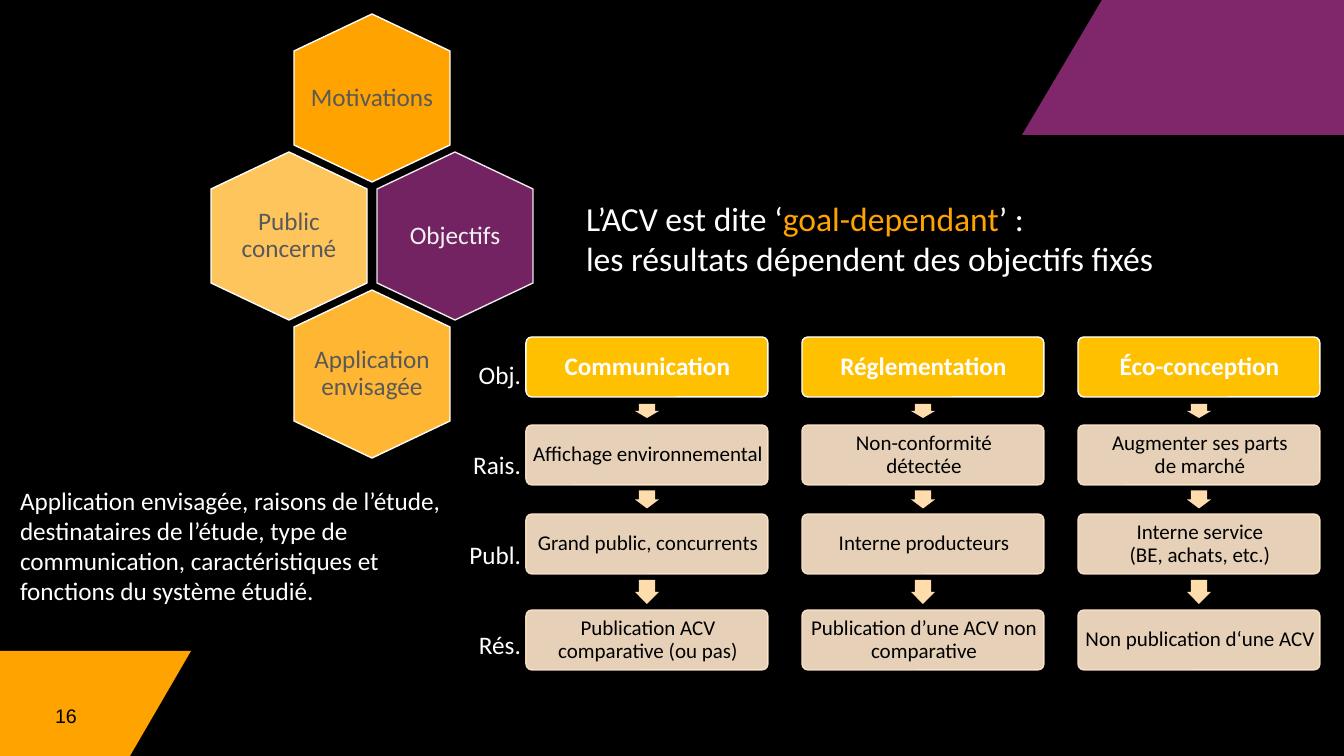
from lxml.etree import SubElement
from pptx import Presentation
from pptx.dml.color import RGBColor
from pptx.enum.shapes import MSO_SHAPE
from pptx.enum.text import MSO_ANCHOR, MSO_AUTO_SIZE, PP_ALIGN
from pptx.oxml.ns import qn
from pptx.util import Pt

PX = 914400 / 100.8

theme = {
    "font": "Calibri", "number_font": "Arial",
    "black": "000000", "white": "FFFFFF", "pale": "F2F2F2", "grey": "595959",
    "purple": "80276C", "orange": "FFA300", "orange_mid": "FFB633", "orange_light": "FFC55D",
    "gold": "FFC000", "cream": "FFE8CC", "arrow": "FFDCAB",
    "title": 24, "body": 18, "cell": 15, "number": 14,
}


def paint(sp, fill, line=None, opacity=100):
    sp.shadow.inherit = False
    sp.fill.solid()
    sp.fill.fore_color.rgb = RGBColor.from_string(theme[fill])
    if line:
        sp.line.color.rgb = RGBColor.from_string(theme[line])
        sp.line.width = Pt(1)
    else:
        sp.line.fill.background()
    if opacity < 100:
        for clr in sp._element.spPr.iter(qn("a:srgbClr")):
            SubElement(clr, qn("a:alpha"), val=str(opacity * 1000))


def write(sp, paragraphs, size, color, margins, anchor, para, font="font", bold=False):
    tf = sp.text_frame
    left, top, right, bottom = [round(m * PX) for m in margins]
    frame = {"word_wrap": True, "auto_size": MSO_AUTO_SIZE.NONE, "vertical_anchor": anchor,
             "margin_left": left, "margin_top": top, "margin_right": right, "margin_bottom": bottom}
    for name, value in frame.items():
        setattr(tf, name, value)
    for i, text in enumerate(paragraphs):
        p = tf.add_paragraph() if i else tf.paragraphs[0]
        p.text = text
        for name, value in para.items():
            setattr(p, name, value)
        if i == 0:
            p.space_before = Pt(0)
        for r in p.runs:
            r.font.name = theme[font]
            r.font.size = Pt(theme[size])
            r.font.bold = bold
            r.font.color.rgb = RGBColor.from_string(theme[color])
    return tf


prs = Presentation()
prs.slide_width = round(1344 * PX)
prs.slide_height = round(756 * PX)
s = prs.slides.add_slide(prs.slide_layouts[1])
s.background.fill.solid()
s.background.fill.fore_color.rgb = RGBColor.from_string(theme["black"])

corners = [
    ("purple", [(1022, 135), (1102, 0), (1344, 0), (1344, 135)]),
    ("orange", [(0, 756), (0, 651), (191, 651), (130, 756)]),
]
for fill, points in corners:
    fb = s.shapes.build_freeform(*points[0], scale=PX)
    fb.add_line_segments(points[1:])
    paint(fb.convert_to_shape(), fill)

number = s.shapes.add_textbox(*[round(v * PX) for v in (0, 685, 87, 47)])
write(number, ["16"], "number", "black", (10, 5, 10, 5), MSO_ANCHOR.BOTTOM,
      {"alignment": PP_ALIGN.RIGHT}, font="number_font")

title, body = s.placeholders
for sp, box in [(title, (562, 193, 610, 85)), (body, (0, 480, 451, 131))]:
    for name, value in zip(("left", "top", "width", "height"), box):
        setattr(sp, name, round(value * PX))

plain = {"alignment": PP_ALIGN.LEFT, "line_spacing": 1.0, "space_before": Pt(0)}
tf = write(title, ["L’ACV est dite ‘"], "title", "white", (24, 5, 0, 0), MSO_ANCHOR.TOP, plain)
p = tf.paragraphs[0]
for text, color in [("goal-dependant", "orange"), ("’ :", "white"),
                    ("les résultats dépendent des objectifs fixés", "white")]:
    if text.startswith("les"):
        p.add_line_break()
    r = p.add_run()
    r.text = text
    r.font.name = theme["font"]
    r.font.size = Pt(theme["title"])
    r.font.color.rgb = RGBColor.from_string(theme[color])

tf = write(body, ["Application envisagée, raisons de l’étude, destinataires de l’étude, type de "
                  "communication, caractéristiques et fonctions du système étudié."],
           "body", "white", (20, 5, 10, 5), MSO_ANCHOR.TOP, plain)
pPr = tf.paragraphs[0]._p.get_or_add_pPr()
for name in ("marL", "indent"):
    pPr.set(name, "0")
SubElement(pPr, qn("a:buNone"))

centred = {"alignment": PP_ALIGN.CENTER, "line_spacing": 0.9}
columns = [
    ["Communication", "Affichage environnemental", "Grand public, concurrents",
     "Publication ACV comparative (ou pas)"],
    ["Réglementation", "Non-conformité\ndétectée", "Interne producteurs",
     "Publication d’une ACV non comparative"],
    ["Éco-conception", "Augmenter ses parts\nde marché", "Interne service\n(BE, achats, etc.)",
     "Non publication d‘une ACV"],
]
row_tops = [337, 425, 514, 610]
arrow_heights = [14, 18, 24]
cell_w, cell_h, arrow_w = 242, 60, 24
for col, texts in enumerate(columns):
    left = 526 + 276 * col
    for row, (text, top) in enumerate(zip(texts, row_tops)):
        sp = s.shapes.add_shape(MSO_SHAPE.ROUNDED_RECTANGLE,
                                *[round(v * PX) for v in (left, top, cell_w, cell_h)])
        sp.adjustments[0] = 0.1
        if row == 0:
            paint(sp, "gold", "white")
            write(sp, [text], "body", "white", (4, 4, 3, 4), MSO_ANCHOR.MIDDLE, centred, bold=True)
            continue
        paint(sp, "cream", "cream", 90)
        write(sp, [text], "cell", "black", (4, 4, 2, 4), MSO_ANCHOR.MIDDLE, centred)
        h = arrow_heights[row - 1]
        middle = (row_tops[row - 1] + cell_h + top) / 2
        arrow = s.shapes.add_shape(MSO_SHAPE.DOWN_ARROW, *[round(v * PX) for v in (
            left + (cell_w - arrow_w) / 2, middle - h / 2, arrow_w, h)])
        arrow.adjustments[0] = 0.67
        arrow.adjustments[1] = 0.5
        paint(arrow, "arrow")

hexagons = [
    ("Objectifs", 455, 236, "purple", "pale", 90),
    ("Application envisagée", 372, 374, "orange_mid", "grey", 100),
    ("Motivations", 372, 98, "orange", "grey", 100),
    ("Public concerné", 289, 236, "orange_light", "grey", 100),
]
hexagon = [(0, -84), (78, -47), (78, 47), (0, 84), (-78, 47), (-78, -47)]
for text, cx, cy, fill, color, opacity in hexagons:
    points = [(cx + dx, cy + dy) for dx, dy in hexagon]
    fb = s.shapes.build_freeform(*points[0], scale=PX)
    fb.add_line_segments(points[1:])
    sp = fb.convert_to_shape()
    paint(sp, fill, "white", opacity)
    write(sp, [text], "body", color, (10, 4, 10, 4), MSO_ANCHOR.MIDDLE, centred)

labels = s.shapes.add_textbox(*[round(v * PX) for v in (450, 339, 81, 328)])
write(labels, ["Obj.", "Rais.", "Publ.", "Rés."], "body", "white", (0, 5, 10, 5), MSO_ANCHOR.TOP,
      {"alignment": PP_ALIGN.RIGHT, "line_spacing": 1.5, "space_before": Pt(32)})

prs.save("out.pptx")
